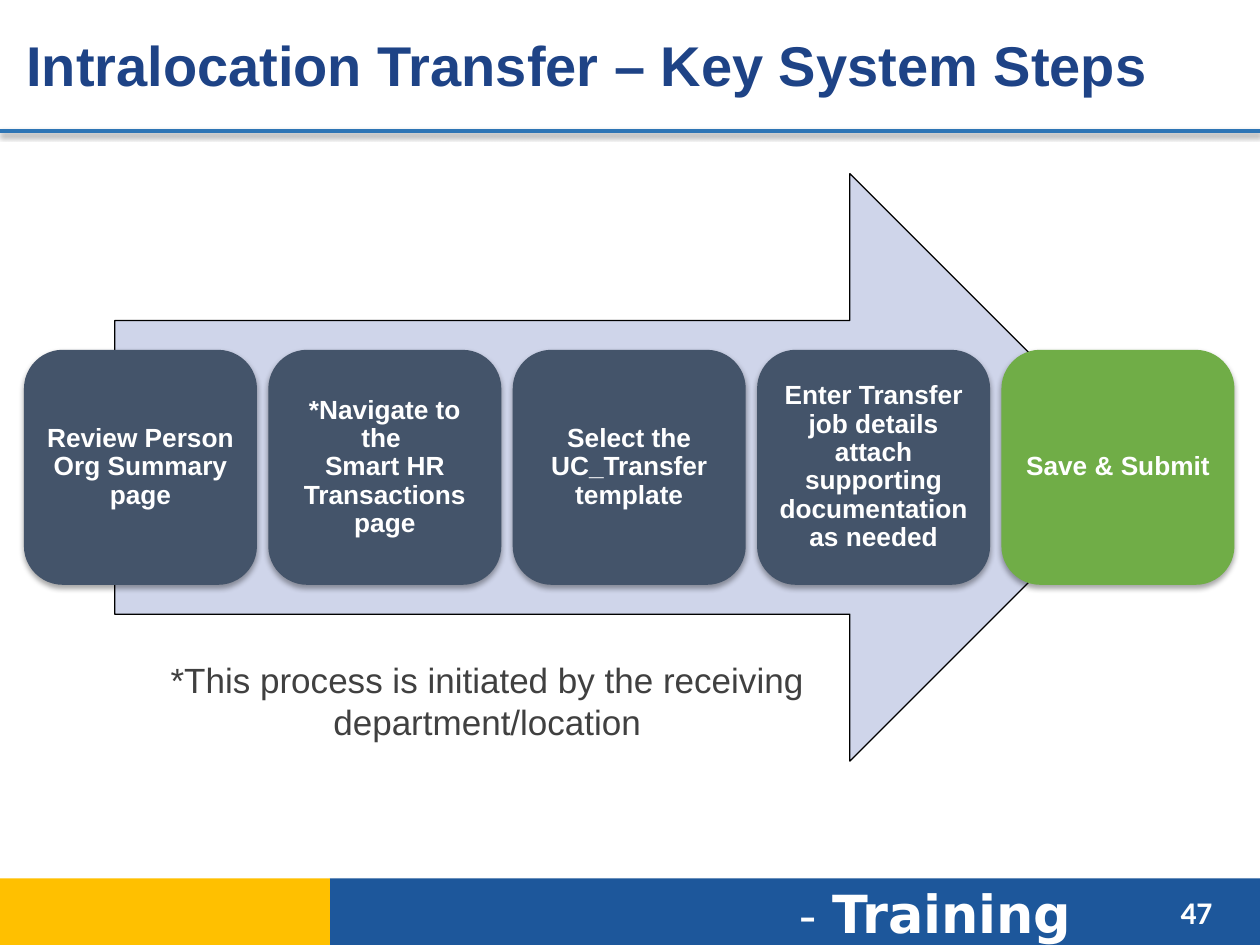
from lxml import etree
from pptx import Presentation
from pptx.dml.color import RGBColor
from pptx.enum.shapes import MSO_CONNECTOR, MSO_SHAPE
from pptx.enum.text import MSO_ANCHOR, PP_ALIGN
from pptx.oxml.ns import qn
from pptx.util import Pt

RECT = MSO_SHAPE.RECTANGLE
ROUND_RECT = MSO_SHAPE.ROUNDED_RECTANGLE
RIGHT_ARROW = MSO_SHAPE.RIGHT_ARROW
STRAIGHT = MSO_CONNECTOR.STRAIGHT
LEFT, CENTER = PP_ALIGN.LEFT, PP_ALIGN.CENTER
TOP, MIDDLE = MSO_ANCHOR.TOP, MSO_ANCHOR.MIDDLE

WHITE, SLATE, GREEN = "FFFFFF", "44546A", "70AD47"
STEPS = [
    ("Review Person Org Summary page", SLATE),
    ("*Navigate to the \nSmart HR Transactions page", SLATE),
    ("Select the UC_Transfer template", SLATE),
    ("Enter Transfer job details attach supporting documentation as needed", SLATE),
    ("Save & Submit", GREEN),
]


def rgb(color):
    return RGBColor.from_string(color)


def add_shadow(shape, opacity, blur, distance):
    """Give a shape a soft black shadow straight below it."""
    effects = etree.SubElement(shape._element.spPr, qn("a:effectLst"))
    shadow = etree.SubElement(effects, qn("a:outerShdw"), blurRad=str(Pt(blur)),
                              dist=str(Pt(distance)), dir="5400000",
                              algn="ctr", rotWithShape="0")
    black = etree.SubElement(shadow, qn("a:srgbClr"), val="000000")
    etree.SubElement(black, qn("a:alpha"), val=str(opacity * 1000))


def add_block(s, kind, box, fill, line=None):
    shape = s.shapes.add_shape(kind, *map(Pt, box))
    shape.fill.solid()
    shape.fill.fore_color.rgb = rgb(fill)
    if line:
        shape.line.color.rgb = rgb(line)
        shape.line.width = Pt(0.75)
    else:
        shape.line.fill.background()
    return shape


def add_run(p, text, color, **font):
    r = p.add_run()
    r.text = text
    r.font.color.rgb = rgb(color)
    for name, value in font.items():
        setattr(r.font, name, value)


def add_text_box(s, box, align=LEFT, anchor=TOP):
    """Add a wrapping text box and return its first paragraph."""
    tf = s.shapes.add_textbox(*map(Pt, box)).text_frame
    tf.word_wrap = True
    tf.vertical_anchor = anchor
    p = tf.paragraphs[0]
    p.alignment = align
    return p


def add_footer(s, left, top, width, height):
    split = 188.5
    add_block(s, RECT, (left + split, top, width - split, height), "1D579B")
    p = add_text_box(s, (449.5, top - 2, 201.5, 44))
    add_run(p, "- ", WHITE, name="DejaVu Sans", size=Pt(28))
    add_run(p, "Training", WHITE, name="DejaVu Sans", size=Pt(30), bold=True)
    p = add_text_box(s, (667.5, top + 5, 43, 29))
    add_run(p, "47", WHITE, name="Calibri", size=Pt(18), bold=True)
    add_block(s, RECT, (left, top, split, height), "FFC000").shadow.inherit = False


def add_header(s, left, top, width, height):
    # Rule under the title
    bottom = top + height
    rule = s.shapes.add_connector(STRAIGHT, Pt(left), Pt(bottom),
                                  Pt(left + width), Pt(bottom))
    rule.line.color.rgb = rgb("2E75B5")
    rule.line.width = Pt(2.25)
    add_shadow(rule, 38, 3.1, 1.6)

    # Title
    p = add_text_box(s, (left + 8, top + 3, width - 22, 67), anchor=MIDDLE)
    add_run(p, "Intralocation Transfer – Key System Steps", "1E4386",
            name="Arial", size=Pt(32), bold=True)


def add_step(s, box, text, fill):
    card = add_block(s, ROUND_RECT, box, fill)
    add_shadow(card, 35, 3.1, 1.8)
    tf = card.text_frame
    tf.word_wrap = True
    tf.vertical_anchor = MIDDLE
    for side in ("left", "top", "right", "bottom"):
        setattr(tf, f"margin_{side}", Pt(4.5))
    p = tf.paragraphs[0]
    p.alignment = CENTER
    p.line_spacing = 0.9
    for i, part in enumerate(text.split("\n")):
        if i:
            p.add_line_break()
        add_run(p, part, WHITE, name="Arial", size=Pt(15), bold=True)


def add_process(s, left, top, width, height):
    # Arrow behind the steps, 85% of the full width
    arrow_width = width * 0.85
    arrow = add_block(s, RIGHT_ARROW, (left + (width - arrow_width) / 2, top,
                                       arrow_width, height), "CFD5EA", "000000")
    arrow.shadow.inherit = False

    # Steps in one row, 40% of the arrow's height
    gap = 6.5
    step_width = (width - gap * (len(STEPS) - 1)) / len(STEPS)
    for i, (text, fill) in enumerate(STEPS):
        add_step(s, (left + i * (step_width + gap), top + height * 0.3,
                     step_width, height * 0.4), text, fill)


def add_note(s, *box):
    p = add_text_box(s, box, CENTER)
    add_run(p, "*This process is initiated by the receiving department/location",
            "404040", name="Arial", size=Pt(20))


def main():
    prs = Presentation()
    prs.slide_width, prs.slide_height = Pt(720), Pt(540)
    s = prs.slides.add_slide(prs.slide_layouts[6])
    add_footer(s, 0, 502, 720, 39)
    add_header(s, 0, 0, 720, 75)
    add_process(s, 13.7, 99.2, 691.7, 335.7)
    add_note(s, 22, 372.5, 513, 55.5)
    prs.save("out.pptx")


if __name__ == "__main__":
    main()
